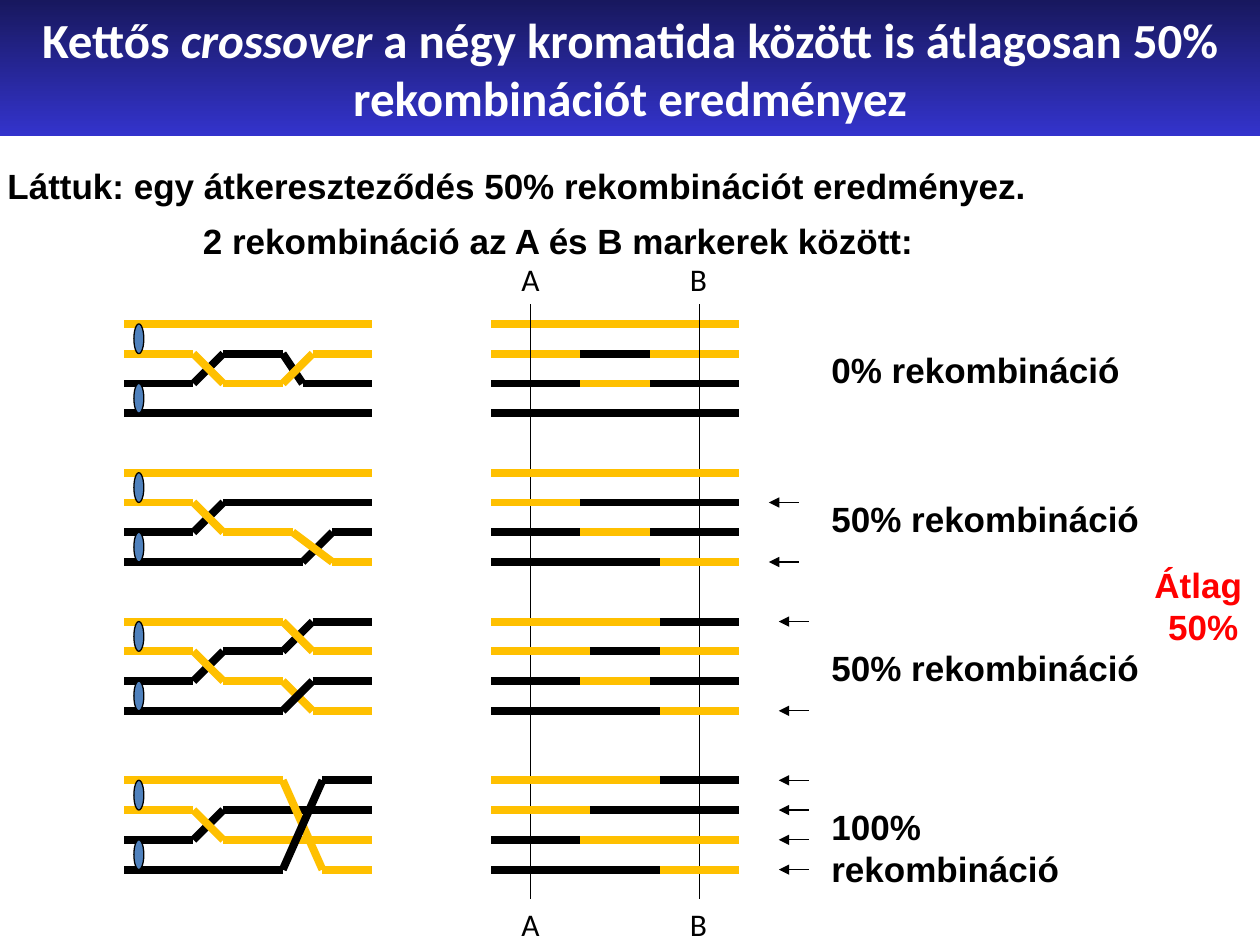
from lxml import etree
from pptx import Presentation
from pptx.dml.color import RGBColor
from pptx.enum.shapes import MSO_CONNECTOR, MSO_SHAPE
from pptx.enum.text import MSO_ANCHOR, MSO_AUTO_SIZE, PP_ALIGN
from pptx.oxml.ns import qn
from pptx.util import Cm, Pt

STRAIGHT, ELLIPSE = MSO_CONNECTOR.STRAIGHT, MSO_SHAPE.OVAL
LEFT, CENTER, RIGHT = PP_ALIGN.LEFT, PP_ALIGN.CENTER, PP_ALIGN.RIGHT
MIDDLE = MSO_ANCHOR.MIDDLE
NO_FIT, GROW = MSO_AUTO_SIZE.NONE, MSO_AUTO_SIZE.SHAPE_TO_FIT_TEXT

ORANGE, BLACK, WHITE, RED = "FFC000", "000000", "FFFFFF", "FF0000"
BLUE, NAVY, INDIGO = "4F81BD", "18185E", "3333CC"

HEADLINE = {"name": "Calibri", "size": Pt(28), "bold": True}
BODY = {"name": "Arial", "size": Pt(20), "bold": True}
MARKER = {"name": "Calibri", "size": Pt(18), "bold": False}

ROW = 0.6                      # distance between neighbouring chromatids
START, CROSS, CROSSED, SECOND, END = 2.5, 3.9, 4.5, 5.7, 7.5
OUT_START, OUT_END = 9.9, 14.9
SWAP, SWAP_LATE, BACK, BACK_LATE = 11.7, 11.9, 13.1, 13.3
MARKERS = {"A": 10.7, "B": 14.1}

# Strands are (x, row) points, swaps (row, x1, x2, colour) on the products.
TETRADS = [
    {"top": 6.53, "label": "0% rekombináció", "arrow_x": 15.5, "arrows": [],
     "strands": [
         (BLACK, [(START, 2), (CROSS, 2), (CROSSED, 1), (SECOND, 1), (6.1, 2), (END, 2)]),
         (BLACK, [(START, 3), (END, 3)]),
         (ORANGE, [(START, 1), (CROSS, 1), (CROSSED, 2), (SECOND, 2), (6.3, 1), (END, 1)]),
         (ORANGE, [(START, 0), (END, 0)])],
     "swaps": [(2, SWAP, BACK, ORANGE), (1, SWAP, BACK, BLACK)]},
    {"top": 9.53, "label": "50% rekombináció", "arrow_x": 15.5, "arrows": [1, 3],
     "strands": [
         (BLACK, [(START, 2), (CROSS, 2), (CROSSED, 1), (END, 1)]),
         (BLACK, [(START, 3), (6.1, 3), (6.7, 2), (END, 2)]),
         (ORANGE, [(START, 1), (CROSS, 1), (CROSSED, 2), (5.9, 2), (6.7, 3), (END, 3)]),
         (ORANGE, [(START, 0), (END, 0)])],
     "swaps": [(2, SWAP, BACK, ORANGE), (1, SWAP, OUT_END, BLACK),
               (3, BACK_LATE, OUT_END, ORANGE)]},
    {"top": 12.53, "label": "50% rekombináció", "arrow_x": 15.7, "arrows": [0, 3],
     "strands": [
         (BLACK, [(START, 2), (CROSS, 2), (CROSSED, 1), (SECOND, 1), (6.3, 0), (END, 0)]),
         (ORANGE, [(START, 0), (SECOND, 0), (6.3, 1), (END, 1)]),
         (ORANGE, [(START, 1), (CROSS, 1), (CROSSED, 2), (SECOND, 2), (6.3, 3), (END, 3)]),
         (BLACK, [(START, 3), (SECOND, 3), (6.3, 2), (END, 2)])],
     "swaps": [(2, SWAP, BACK, ORANGE), (3, BACK_LATE, OUT_END, ORANGE),
               (0, BACK_LATE, OUT_END, BLACK), (1, SWAP_LATE, BACK_LATE, BLACK)]},
    {"top": 15.73, "label": "100% rekombináció", "arrow_x": 15.7, "arrows": [0, 1, 2, 3],
     "strands": [
         (BLACK, [(START, 2), (CROSS, 2), (CROSSED, 1), (END, 1)]),
         (ORANGE, [(START, 1), (CROSS, 1), (CROSSED, 2), (END, 2)]),
         (ORANGE, [(START, 0), (SECOND, 0), (6.5, 3), (END, 3)]),
         (BLACK, [(START, 3), (SECOND, 3), (6.5, 0), (END, 0)])],
     "swaps": [(2, SWAP, OUT_END, ORANGE), (3, BACK_LATE, OUT_END, ORANGE),
               (0, BACK_LATE, OUT_END, BLACK), (1, SWAP_LATE, OUT_END, BLACK)]},
]


def rgb(value):
    return RGBColor.from_string(value)


def place(sp, *box):
    for name, value in zip(("left", "top", "width", "height"), box):
        setattr(sp, name, Cm(value))


class Board:
    """Slide with the drawing style of the chromatid diagrams."""

    def __init__(self, s):
        self.s = s

    def add_run(self, p, text, style, color, italic=False):
        r = p.add_run()
        r.text = text
        for name, value in {**style, "italic": italic}.items():
            setattr(r.font, name, value)
        r.font.color.rgb = rgb(color)

    def title(self, runs):
        sp = self.s.shapes.title
        place(sp, 0, 0, 25.4, 2.74)
        sp.fill.gradient()
        sp.fill.gradient_angle = 270
        for stop, color in zip(sp.fill.gradient_stops, (NAVY, INDIGO)):
            stop.color.rgb = rgb(color)
        tf = sp.text_frame
        tf.word_wrap, tf.auto_size, tf.vertical_anchor = True, NO_FIT, MIDDLE
        p = tf.paragraphs[0]
        p.alignment = CENTER
        for text, italic in runs:
            self.add_run(p, text, HEADLINE, WHITE, italic)

    def text(self, lines, box, style=BODY, color=BLACK, align=LEFT, wrap=False):
        tf = self.s.shapes.add_textbox(*map(Cm, box)).text_frame
        tf.word_wrap, tf.auto_size = wrap, GROW
        for i, line in enumerate(lines):
            p = tf.add_paragraph() if i else tf.paragraphs[0]
            p.alignment = align
            self.add_run(p, line, style, color)

    def line(self, start, end, color=BLACK, width=0.75, arrow=False):
        sp = self.s.shapes.add_connector(STRAIGHT, *map(Cm, (*start, *end)))
        sp.line.color.rgb = rgb(color)
        sp.line.width = Pt(width)
        sp_pr = sp._element.spPr
        if arrow:
            etree.SubElement(sp_pr.find(qn("a:ln")), qn("a:tailEnd"), type="triangle")
        etree.SubElement(sp_pr, qn("a:effectLst"))

    def strand(self, points, color):
        for start, end in zip(points, points[1:]):
            self.line(start, end, color, 4.5)

    def centromere(self, y):
        sp = self.s.shapes.add_shape(ELLIPSE, Cm(2.7), Cm(y), Cm(0.2), Cm(ROW))
        sp.shadow.inherit = False
        sp.fill.solid()
        sp.fill.fore_color.rgb = rgb(BLUE)
        sp.line.color.rgb = rgb(BLACK)
        sp.line.width = Pt(0.75)

    def tetrad(self, top, label, strands, swaps, arrow_x, arrows):
        """Crossing strands, their products, result arrows and label."""
        rows = [top + i * ROW for i in range(4)]
        for color, points in strands:
            self.strand([(x, rows[i]) for x, i in points], color)
        for y in rows[::2]:
            self.centromere(y)
        for y, color in zip(rows, (ORANGE, ORANGE, BLACK, BLACK)):
            self.strand([(OUT_START, y), (OUT_END, y)], color)
        for i, x1, x2, color in swaps:
            self.strand([(x1, rows[i]), (x2, rows[i])], color)
        for i in arrows:
            self.line((arrow_x + 0.6, rows[i]), (arrow_x, rows[i]), arrow=True)
        self.text([label], (16.51, top + 0.38, 6.8, 1.11))

    def marker(self, name, x):
        self.line((x, 6.13), (x, 18.13))
        for y in (5.12, 18.12):
            self.text([name], (x - 0.44, y, 0.95, 1.02), MARKER)


def main():
    prs = Presentation()
    prs.slide_width, prs.slide_height = Cm(25.4), Cm(19.05)
    board = Board(prs.slides.add_slide(prs.slide_layouts[5]))
    board.title([("Kettős ", False), ("crossover", True),
                 (" a négy kromatida között is átlagosan 50% rekombinációt eredményez", False)])
    board.text(["Láttuk: egy átkereszteződés 50% rekombinációt eredményez."],
               (-0.1, 3.2, 22.05, 1.11), wrap=True)
    board.text(["2 rekombináció az A és B markerek között:"],
               (3.73, 4.31, 14.94, 1.11), align=RIGHT)
    first, *others = TETRADS
    board.tetrad(**first)
    for name, x in MARKERS.items():
        board.marker(name, x)
    for tetrad in others:
        board.tetrad(**tetrad)
    board.text(["Átlag ", "50%"], (23.01, 11.23, 2.49, 1.96), color=RED, align=CENTER)
    prs.save("out.pptx")


if __name__ == "__main__":
    main()
